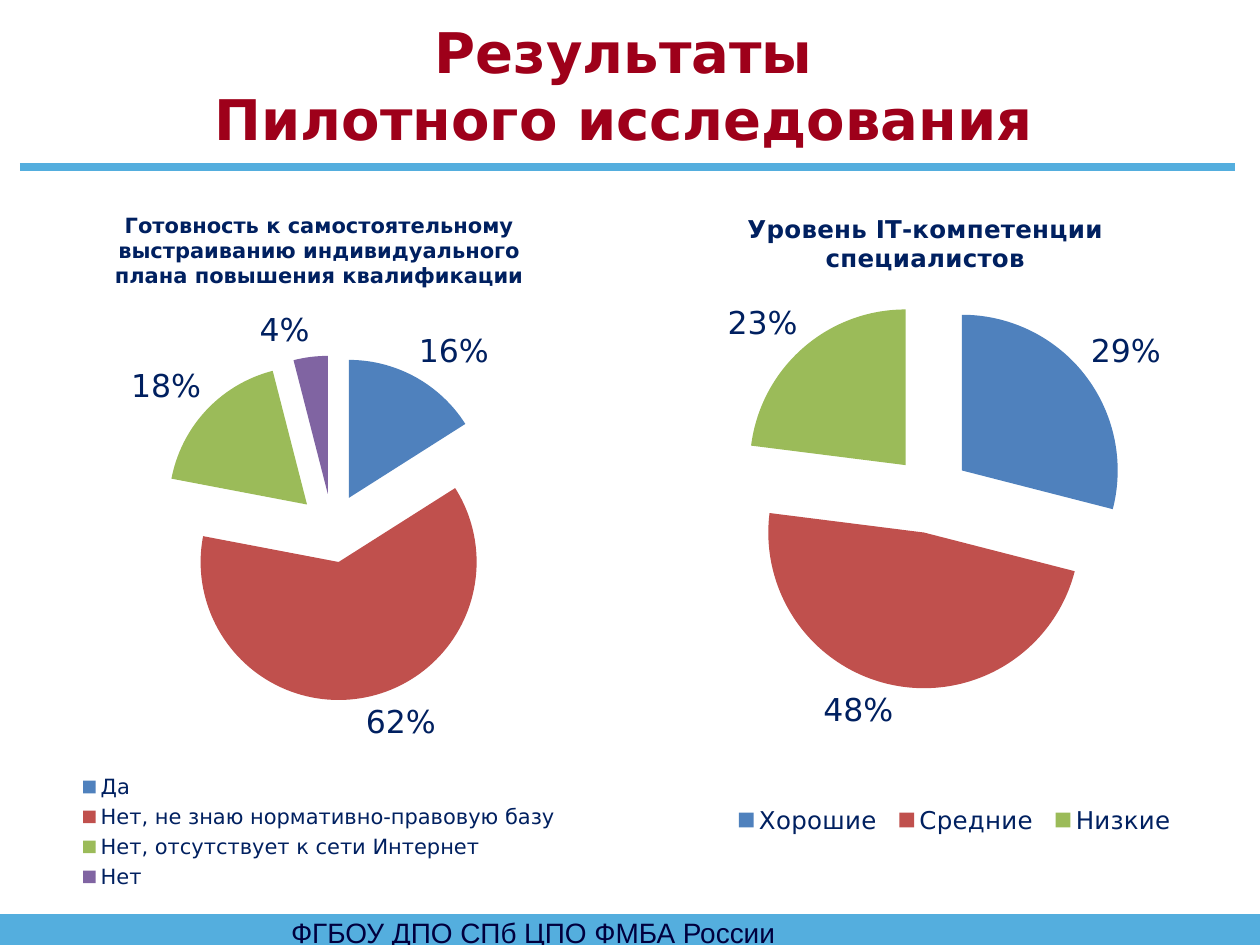
"""Build a slide with two exploded pie charts of survey results."""
from lxml import etree
from pptx import Presentation
from pptx.chart.data import CategoryChartData
from pptx.enum import chart as charts, shapes, text
from pptx.oxml.ns import qn
from pptx.dml.color import RGBColor
from pptx.util import Cm, Pt

COLORS = {"title": "9E001A", "band": "54AEDE", "footer": "00003E", "chart": "002060"}
SLICES = ["4F81BD", "C0504D", "9BBB59", "8064A2"]
FONT = "DejaVu Sans"
EXPLOSION = 25
TITLE = "Результаты\vПилотного исследования"
FOOTER = "ФГБОУ ДПО СПб ЦПО ФМБА России"
PIES = [
    {
        "title": "Готовность к самостоятельному выстраиванию индивидуального "
                 "плана повышения квалификации",
        "values": {"Да": 16, "Нет, не знаю нормативно-правовую базу": 62,
                   "Нет, отсутствует к сети Интернет": 18, "Нет": 4},
        "box": (0.58, 3.76, 11.71, 14.27), "size": 12,
    },
    {
        "title": "Уровень IT-компетенции специалистов",
        "values": {"Хорошие": 29, "Средние": 48, "Низкие": 23},
        "box": (12.7, 3.76, 11.91, 14.27), "size": 14,
        "plot": (0.18, 0.16, 0.66, 0.55), "legend": (0.16, 0.87, 0.78, 0.05),
    },
]


def color(name):
    return RGBColor.from_string(COLORS[name])


def style(font, size, name, bold=False, family=FONT):
    font.size, font.bold, font.name = Pt(size), bold, family
    font.color.rgb = color(name)


def place(parent, index, fractions, inner=False):
    for old in parent.findall(qn("c:layout")):
        parent.remove(old)
    layout = etree.Element(qn("c:layout"))
    parent.insert(index, layout)
    manual = etree.SubElement(layout, qn("c:manualLayout"))
    settings = [("layoutTarget", "inner")] if inner else []
    settings += [("xMode", "edge"), ("yMode", "edge")]
    settings += zip("xywh", fractions)
    for tag, value in settings:
        etree.SubElement(manual, qn(f"c:{tag}")).set("val", str(value))


def add_pie(slide, pie):
    data = CategoryChartData()
    data.categories = list(pie["values"])
    data.add_series("Series 1", list(pie["values"].values()))
    chart = slide.shapes.add_chart(
        charts.XL_CHART_TYPE.PIE, *map(Cm, pie["box"]), data).chart
    style(chart.font, 18, "chart")

    chart.has_title = True
    frame = chart.chart_title.text_frame
    frame.text = pie["title"]
    style(frame.paragraphs[0].runs[0].font, pie["size"], "chart", bold=True)
    chart.chart_title.include_in_layout = False

    chart.has_legend = True
    chart.legend.position = charts.XL_LEGEND_POSITION.BOTTOM
    chart.legend.include_in_layout = False
    style(chart.legend.font, pie["size"], "chart")

    plot = chart.plots[0]
    plot.vary_by_categories = True
    explosion = etree.Element(qn("c:explosion"))
    explosion.set("val", str(EXPLOSION))
    chart.element.find(".//" + qn("c:ser")).find(qn("c:tx")).addnext(explosion)
    for index, fill in zip(range(len(pie["values"])), SLICES):
        slice_fill = plot.series[0].points[index].format.fill
        slice_fill.solid()
        slice_fill.fore_color.rgb = RGBColor.from_string(fill)

    plot.has_data_labels = True
    labels = plot.data_labels
    labels.show_percentage, labels.show_value = True, False
    labels.number_format, labels.number_format_is_linked = "0%", False
    labels.position = charts.XL_LABEL_POSITION.OUTSIDE_END
    style(labels.font, 18, "chart")

    if "plot" in pie:
        place(chart.element.find(".//" + qn("c:plotArea")), 0, pie["plot"], inner=True)
        place(chart.element.find(".//" + qn("c:legend")), 1, pie["legend"])


def add_frame(slide):
    band = slide.shapes.add_shape(
        shapes.MSO_SHAPE.RECTANGLE, 0, Cm(18.47), Cm(25.4), Cm(0.58))
    band.shadow.inherit = False
    band.fill.solid()
    band.fill.fore_color.rgb = band.line.color.rgb = color("band")
    band.line.width = Pt(2)

    rule = slide.shapes.add_connector(
        shapes.MSO_CONNECTOR.STRAIGHT, Cm(0.4), Cm(3.37), Cm(24.9), Cm(3.37))
    rule.line.color.rgb = color("band")
    rule.line.width = Pt(4.5)
    etree.SubElement(rule._element.spPr, qn("a:effectLst"))

    footer = slide.shapes.add_textbox(Cm(0.4), Cm(18.34), Cm(20.7), Cm(0.94))
    footer.text_frame.word_wrap = True
    footer.text_frame.text = FOOTER
    paragraph = footer.text_frame.paragraphs[0]
    paragraph.alignment = text.PP_ALIGN.CENTER
    style(paragraph.runs[0].font, 16, "footer", family="Arial")


def add_title(slide):
    title = slide.shapes.title
    title.left, title.top, title.width, title.height = map(Cm, (0.58, 0.4, 24, 2.6))
    frame = title.text_frame
    frame.text = TITLE
    frame.auto_size = text.MSO_AUTO_SIZE.NONE
    frame.vertical_anchor = text.MSO_ANCHOR.MIDDLE
    paragraph = frame.paragraphs[0]
    paragraph.alignment = text.PP_ALIGN.CENTER
    for run in paragraph.runs:
        style(run.font, 32, "title", bold=True)


def main():
    presentation = Presentation()
    presentation.slide_width, presentation.slide_height = Cm(25.4), Cm(19.05)
    slide = presentation.slides.add_slide(presentation.slide_layouts[5])
    add_frame(slide)
    add_title(slide)
    for pie in PIES:
        add_pie(slide, pie)
    presentation.save("out.pptx")


if __name__ == "__main__":
    main()
